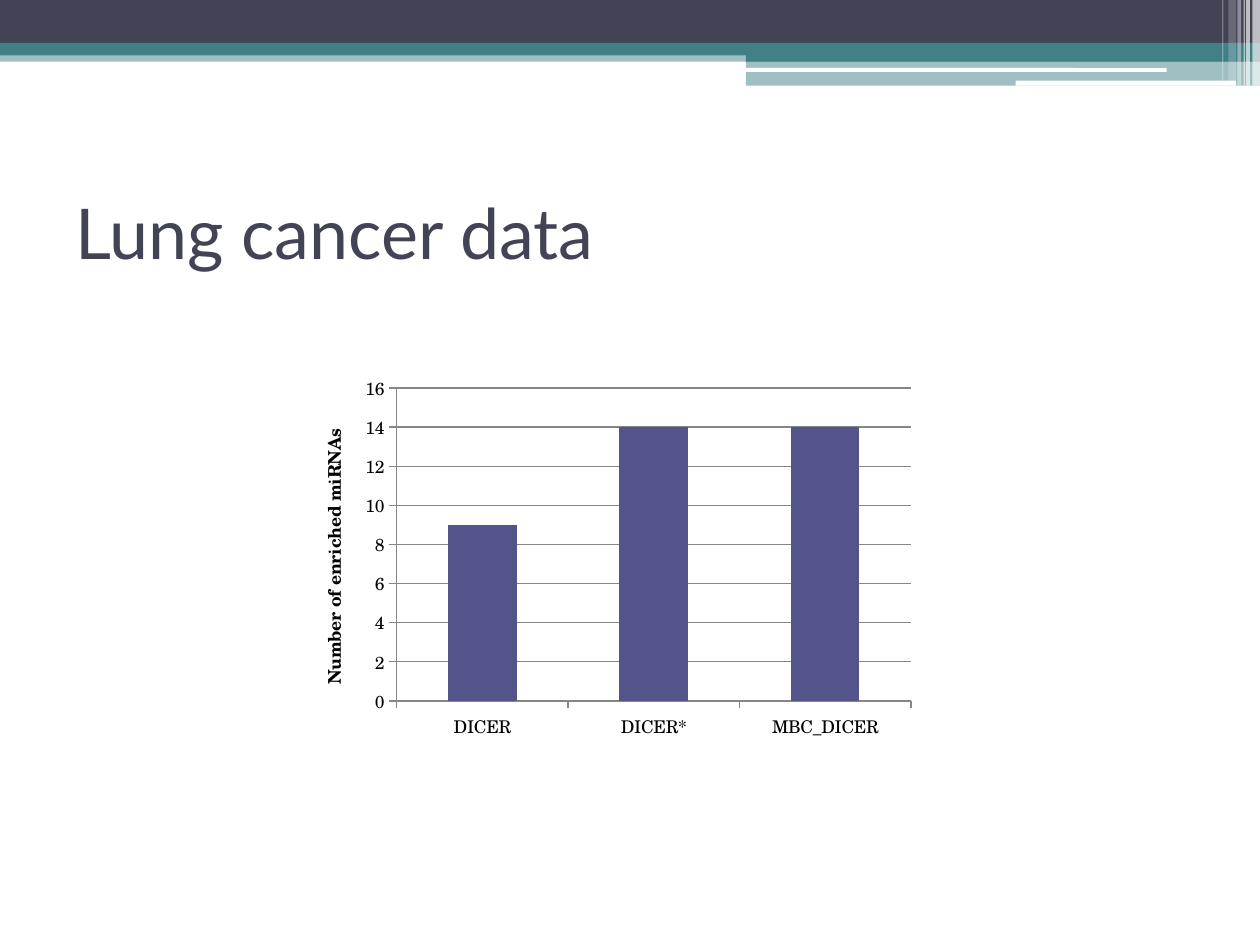
"""Build the lung cancer data slide: a banded header, a title and a column chart."""
import pptx
import pptx.chart.data
import pptx.dml.color
import pptx.enum.chart
import pptx.enum.shapes
import pptx.enum.text
import pptx.oxml
import pptx.oxml.ns
import pptx.util

RGB = pptx.dml.color.RGBColor
INK = RGB(0x42, 0x44, 0x56)
TEAL = RGB(0x43, 0x80, 0x86)
WHITE = RGB(0xFF, 0xFF, 0xFF)
BLACK = RGB(0x00, 0x00, 0x00)
BAR = RGB(0x53, 0x54, 0x8A)
GRID = RGB(0x86, 0x86, 0x86)

WIDTH, HEIGHT = 10, 7.5
TAB = 5.92
TITLE = "Lung cancer data"
AXIS_TITLE = "Number of enriched miRNAs"
COUNTS = {"DICER": 9, "DICER*": 14, "MBC_DICER": 14}

# left, top, height, colour, opacity
BANDS = [
    (0, 0.4, 0.09, TEAL, 50),
    (0, 0, 0.34, INK, 100),
    (0, 0.34, 0.1, TEAL, 100),
    (TAB, 0.39, 0.1, TEAL, 100),
    (TAB, 0.48, 0.2, TEAL, 50),
]
SLOTS = [(5.91, 0.54, 3.35, 0.03), (8.06, 0.64, 1.75, 0.04)]
STRIPES = [
    (9.94, 0.06, 0.68, 65),
    (9.89, 0.03, 0.68, 65),
    (9.87, 0.01, 0.68, 60),
    (9.82, 0.03, 0.68, 40),
    (9.75, 0.06, 0.64, 20),
    (9.7, 0.01, 0.64, 30),
]


def inches(*lengths):
    return [pptx.util.Inches(n) for n in lengths]


def add_block(slide, box, color, opacity=100, kind="RECTANGLE"):
    shape_type = getattr(pptx.enum.shapes.MSO_SHAPE, kind)
    sp = slide.shapes.add_shape(shape_type, *inches(*box))
    sp.shadow.inherit = False
    sp.line.fill.background()
    sp.fill.solid()
    sp.fill.fore_color.rgb = color
    if opacity < 100:
        clr = sp.fill._xPr.find(".//" + pptx.oxml.ns.qn("a:srgbClr"))
        alpha = pptx.oxml.parse_xml(
            f'<a:alpha {pptx.oxml.ns.nsdecls("a")} val="{opacity * 1000}"/>')
        clr.append(alpha)


def add_header(slide):
    for left, top, height, color, opacity in BANDS:
        add_block(slide, (left, top, WIDTH - left, height), color, opacity)
    for box in SLOTS:
        add_block(slide, box, WHITE, kind="ROUNDED_RECTANGLE")
    for left, width, height, opacity in STRIPES:
        add_block(slide, (left, 0, width, height), WHITE, opacity)


def add_title(slide):
    tf = slide.shapes.add_textbox(*inches(0.5, 1.25, 9, 1.17)).text_frame
    tf.word_wrap = True
    tf.vertical_anchor = pptx.enum.text.MSO_ANCHOR.MIDDLE
    p = tf.paragraphs[0]
    p.text = TITLE
    p.alignment = pptx.enum.text.PP_ALIGN.LEFT
    p.font.name = "Lato"
    p.font.size = pptx.util.Pt(40)
    p.font.color.rgb = INK


def add_chart(slide):
    data = pptx.chart.data.CategoryChartData()
    data.categories = list(COUNTS)
    data.add_series("Series 1", list(COUNTS.values()))
    chart = slide.shapes.add_chart(
        pptx.enum.chart.XL_CHART_TYPE.COLUMN_CLUSTERED,
        *inches(2.33, 2.92, 5, 3), data).chart
    chart.has_legend = False
    chart.has_title = False
    chart.font.name = "TeX Gyre Schola"
    chart.font.size = pptx.util.Pt(10)
    chart.font.color.rgb = BLACK

    plot = chart.plots[0]
    plot.vary_by_categories = False
    plot.gap_width = 150
    fill = plot.series[0].format.fill
    fill.solid()
    fill.fore_color.rgb = BAR

    axis = chart.value_axis
    axis.minimum_scale, axis.maximum_scale, axis.major_unit = 0, 16, 2
    axis.has_major_gridlines = True
    tf = axis.axis_title.text_frame
    tf.text = AXIS_TITLE
    font = tf.paragraphs[0].font
    font.name = "TeX Gyre Schola"
    font.size = pptx.util.Pt(10)
    font.bold = True
    font.color.rgb = BLACK
    for part in (axis, axis.major_gridlines, chart.category_axis):
        part.format.line.color.rgb = GRID
        part.format.line.width = pptx.util.Pt(0.75)
    for part in (axis, chart.category_axis):
        part.major_tick_mark = pptx.enum.chart.XL_TICK_MARK.OUTSIDE


def main():
    prs = pptx.Presentation()
    prs.slide_width, prs.slide_height = inches(WIDTH, HEIGHT)
    slide = prs.slides.add_slide(prs.slide_layouts[6])
    add_header(slide)
    add_title(slide)
    add_chart(slide)
    prs.save("out.pptx")


if __name__ == "__main__":
    main()
